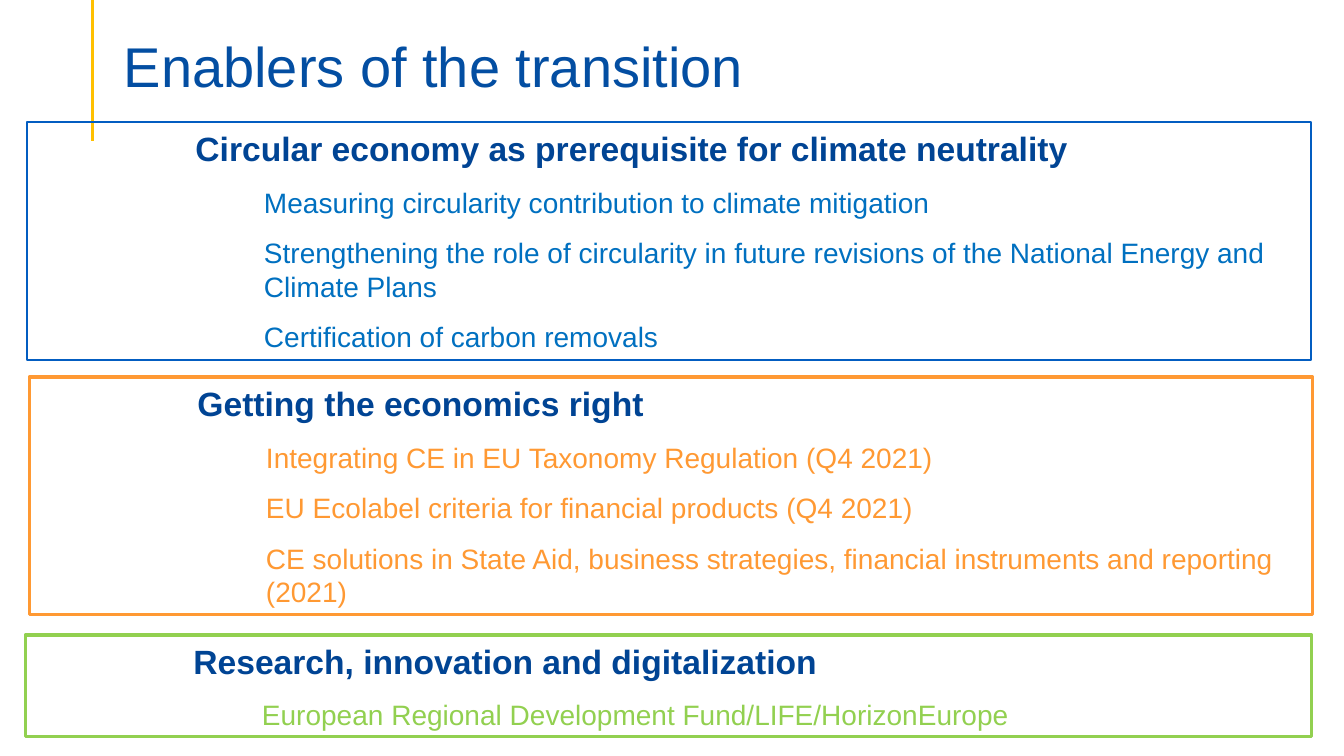
from pptx import Presentation
from pptx.dml.color import RGBColor
from pptx.enum.shapes import MSO_CONNECTOR, MSO_SHAPE
from pptx.enum.text import MSO_ANCHOR, PP_ALIGN
from pptx.oxml.ns import qn
from pptx.util import Inches, Pt
from lxml import etree

STRAIGHT = MSO_CONNECTOR.STRAIGHT
RECTANGLE = MSO_SHAPE.RECTANGLE
LEFT = PP_ALIGN.LEFT
MIDDLE, BOTTOM = MSO_ANCHOR.MIDDLE, MSO_ANCHOR.BOTTOM

FONT = "Arial"
TITLE_BLUE = RGBColor(0x03, 0x4E, 0xA2)
HEADING_BLUE = RGBColor(0x00, 0x44, 0x94)
FRAME_BLUE = RGBColor(0x03, 0x5D, 0xC1)
TEXT_BLUE = RGBColor(0x00, 0x70, 0xC0)
ORANGE = RGBColor(0xFF, 0x99, 0x33)
GREEN = RGBColor(0x92, 0xD0, 0x50)
YELLOW = RGBColor(0xFF, 0xC0, 0x00)

# Content
TITLE = "Enablers of the transition"
ENABLERS = [
    {
        "heading": "Circular economy as prerequisite for climate neutrality",
        "items": [
            "Measuring circularity contribution to climate mitigation",
            "Strengthening the role of circularity in future revisions of the "
            "National Energy and Climate Plans",
            "Certification of carbon removals",
        ],
        "box": (0.27, 1.21, 12.73, 2.36),
        "frame": (FRAME_BLUE, 1.5),
        "text_color": TEXT_BLUE,
    },
    {
        "heading": "Getting the economics right",
        "items": [
            "Integrating CE in EU Taxonomy Regulation (Q4 2021)",
            "EU Ecolabel criteria for financial products (Q4 2021)",
            "CE solutions in State Aid, business strategies, financial "
            "instruments and reporting (2021)",
        ],
        "box": (0.29, 3.74, 12.73, 2.36),
        "frame": (ORANGE, 2.25),
        "text_color": ORANGE,
    },
    {
        "heading": "Research, innovation and digitalization",
        "items": ["European Regional Development Fund/LIFE/HorizonEurope"],
        "box": (0.25, 6.3, 12.76, 1.01),
        "frame": (GREEN, 2.25),
        "text_color": GREEN,
    },
]
HEADING_INDENT, ITEM_INDENT = 1.57, 2.25


def format_text(paragraph, size, color, bold=False):
    for run in paragraph.runs:
        run.font.name = FONT
        run.font.size = Pt(size)
        run.font.bold = bold
        run.font.color.rgb = color


def add_enabler(slide, enabler):
    shape = slide.shapes.add_shape(RECTANGLE, *map(Inches, enabler["box"]))
    shape.shadow.inherit = False
    shape.fill.background()
    color, width = enabler["frame"]
    shape.line.color.rgb = color
    shape.line.width = Pt(width)

    text_frame = shape.text_frame
    text_frame.word_wrap = True
    text_frame.vertical_anchor = MIDDLE
    text_frame.text = "\n".join([enabler["heading"], *enabler["items"]])
    for index, paragraph in enumerate(text_frame.paragraphs):
        is_heading = index == 0
        indent = HEADING_INDENT if is_heading else ITEM_INDENT
        properties = paragraph._p.get_or_add_pPr()
        properties.set("marL", str(Inches(indent)))
        properties.set("indent", "0")
        paragraph.alignment = LEFT
        paragraph.space_before = Pt(0 if is_heading else 6)
        paragraph.space_after = Pt(6)
        if is_heading:
            format_text(paragraph, 24, HEADING_BLUE, bold=True)
        else:
            format_text(paragraph, 20, enabler["text_color"])


presentation = Presentation()
presentation.slide_width = Inches(13.33)
presentation.slide_height = Inches(7.5)
slide = presentation.slides.add_slide(presentation.slide_layouts[6])

# Accent line beside the title
accent = slide.shapes.add_connector(
    STRAIGHT, Inches(0.92), Inches(0), Inches(0.92), Inches(1.4))
accent.line.color.rgb = YELLOW
accent.line.width = Pt(2.25)
etree.SubElement(accent._element.spPr, qn("a:effectLst"))

# Title
title = slide.shapes.add_textbox(
    Inches(1.13), Inches(0.13), Inches(11.5), Inches(0.86))
title_frame = title.text_frame
title_frame.word_wrap = True
title_frame.vertical_anchor = BOTTOM
title_frame.margin_bottom = 0
title_frame.text = TITLE
title_frame.paragraphs[0].line_spacing = 0.9
format_text(title_frame.paragraphs[0], 40, TITLE_BLUE)

# Framed enablers
for enabler in ENABLERS:
    add_enabler(slide, enabler)

presentation.save("out.pptx")
